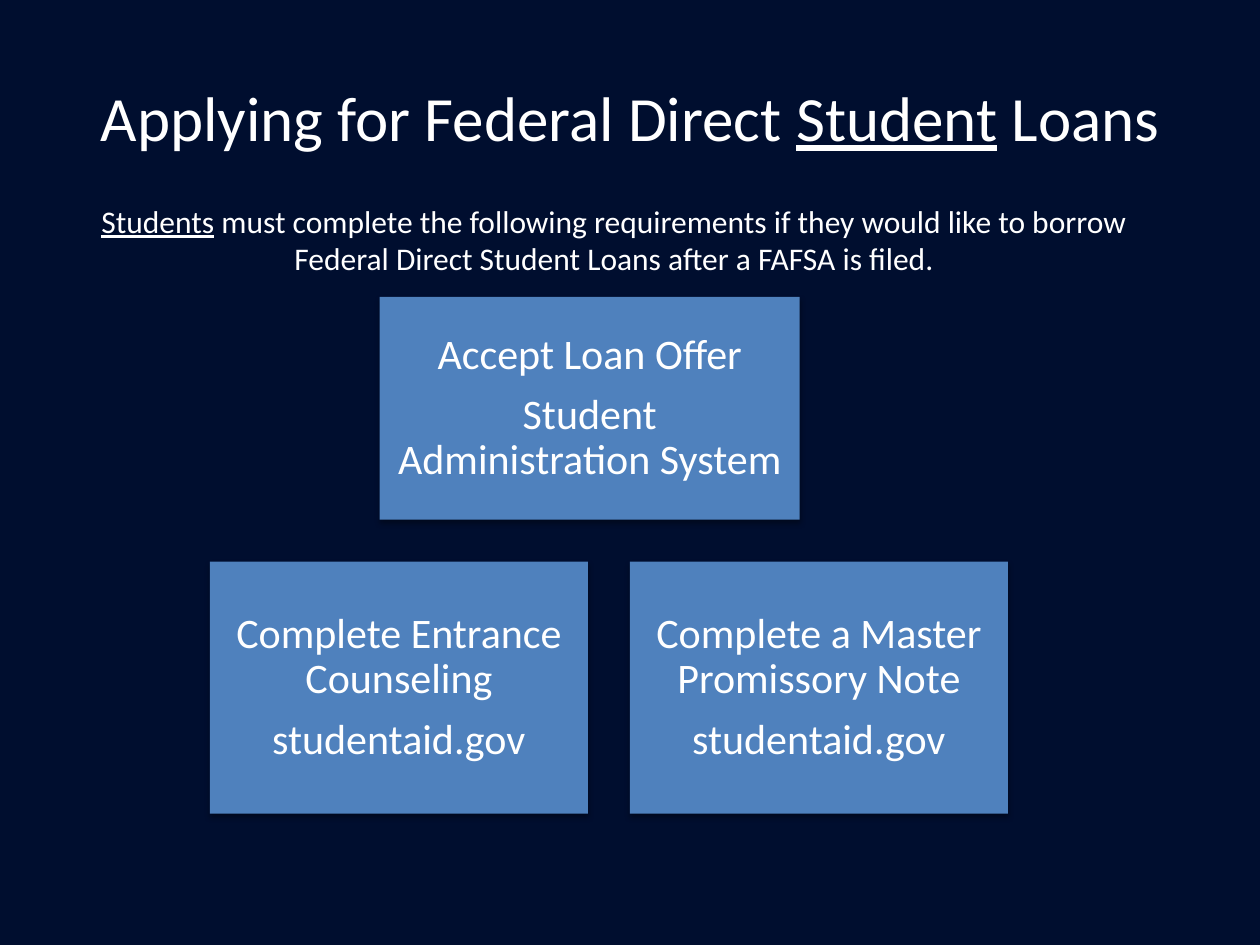
from dataclasses import dataclass

from lxml import etree
from pptx import Presentation
from pptx.dml.color import RGBColor
from pptx.enum.shapes import MSO_SHAPE
from pptx.enum.text import MSO_ANCHOR, PP_ALIGN
from pptx.oxml.ns import qn
from pptx.util import Pt

RECTANGLE = MSO_SHAPE.RECTANGLE
TOP = MSO_ANCHOR.TOP
MIDDLE = MSO_ANCHOR.MIDDLE
CENTER = PP_ALIGN.CENTER


@dataclass(frozen=True)
class Theme:
    font: str = "Calibri"
    background: RGBColor = RGBColor(0x00, 0x0E, 0x2F)
    box: RGBColor = RGBColor(0x4F, 0x81, 0xBD)
    text: RGBColor = RGBColor(0xFF, 0xFF, 0xFF)
    shadow: str = "000000"
    title_size: int = 36
    intro_size: int = 18
    box_size: int = 24


THEME = Theme()


def style_paragraph(paragraph, size):
    paragraph.alignment = CENTER
    paragraph.font.name = THEME.font
    paragraph.font.size = Pt(size)
    paragraph.font.color.rgb = THEME.text


def add_text(slide, bounds, runs, size, anchor):
    shape = slide.shapes.add_textbox(*map(Pt, bounds))
    frame = shape.text_frame
    frame.word_wrap = True
    frame.vertical_anchor = anchor
    paragraph = frame.paragraphs[0]
    style_paragraph(paragraph, size)
    for text, underlined in runs:
        run = paragraph.add_run()
        run.text = text
        run.font.underline = underlined


def add_shadow(shape):
    shape.shadow.inherit = False
    effects = shape._element.spPr.find(qn("a:effectLst"))
    shadow = etree.SubElement(
        effects, qn("a:outerShdw"), blurRad=str(Pt(3.1)), dist=str(Pt(1.8)),
        dir="5400000", rotWithShape="0")
    color = etree.SubElement(shadow, qn("a:srgbClr"), val=THEME.shadow)
    etree.SubElement(color, qn("a:alpha"), val="35000")


def add_step(slide, bounds, lines):
    shape = slide.shapes.add_shape(RECTANGLE, *map(Pt, bounds))
    shape.fill.solid()
    shape.fill.fore_color.rgb = THEME.box
    shape.line.fill.background()
    add_shadow(shape)
    frame = shape.text_frame
    frame.word_wrap = True
    frame.vertical_anchor = MIDDLE
    frame.margin_left = frame.margin_right = Pt(7.2)
    frame.margin_top = frame.margin_bottom = Pt(7.2)
    frame.text = "\n".join(lines)
    for paragraph in frame.paragraphs:
        style_paragraph(paragraph, THEME.box_size)
        paragraph.line_spacing = 0.9
        paragraph.space_after = Pt(0.35 * THEME.box_size)


def main():
    presentation = Presentation()
    presentation.slide_width = Pt(720)
    presentation.slide_height = Pt(540)
    slide = presentation.slides.add_slide(presentation.slide_layouts[6])
    slide.background.fill.solid()
    slide.background.fill.fore_color.rgb = THEME.background

    add_text(slide, (36, 21.6, 648, 90), [
        ("Applying for Federal Direct ", False),
        ("Student", True),
        (" Loans", False),
    ], THEME.title_size, MIDDLE)
    add_text(slide, (48, 111.6, 606, 51), [
        ("Students", True),
        (" must complete the following requirements if they would like to "
         "borrow Federal Direct Student Loans after a FAFSA is filed.", False),
    ], THEME.intro_size, TOP)

    add_step(slide, (217, 169.7, 240, 127.2),
             ["Accept Loan Offer", "Student Administration System"])
    tasks = ["Complete Entrance Counseling", "Complete a Master Promissory Note"]
    width, gap = 216, 24
    for column, task in enumerate(tasks):
        left = 120 + column * (width + gap)
        add_step(slide, (left, 321, width, 144), [task, "studentaid.gov"])

    presentation.save("out.pptx")


if __name__ == "__main__":
    main()
